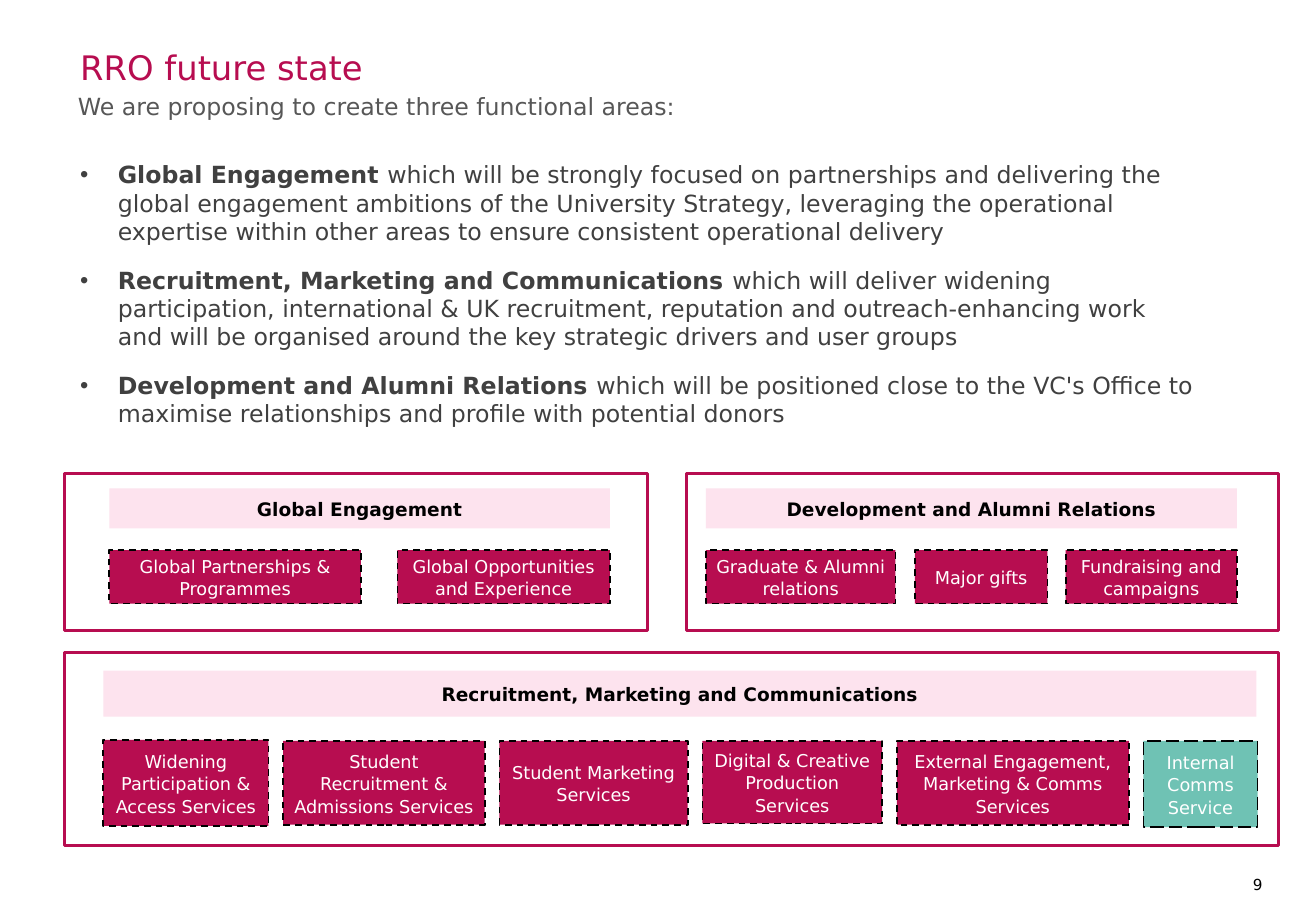
"""Build the slide on the three proposed functional areas."""
from dataclasses import dataclass

from lxml.etree import SubElement
from pptx import Presentation
from pptx.dml.color import RGBColor
from pptx.enum.dml import MSO_LINE_DASH_STYLE as Dash
from pptx.enum.shapes import MSO_SHAPE as Shape
from pptx.enum.text import MSO_ANCHOR as Anchor, MSO_AUTO_SIZE as AutoSize, PP_ALIGN as Align
from pptx.oxml.ns import qn
from pptx.util import Inches, Pt

FONT = "DejaVu Sans"
CRIMSON, PINK, TEAL = "B70D50", "FDE3EE", "6FC2B4"
BLACK, WHITE, GREY, DARK = "000000", "FFFFFF", "575757", "404040"
INDENT = 0.31


@dataclass
class Rect:
    left: float
    top: float
    width: float
    height: float

    def lengths(self) -> list:
        return [Inches(v) for v in (self.left, self.top, self.width, self.height)]


@dataclass
class Team:
    text: str
    rect: Rect
    fill: str = CRIMSON
    dash: Dash = Dash.DASH


@dataclass
class Area:
    name: str
    frame: Rect
    header: Rect
    teams: list[Team]


POINTS = [
    ("Global Engagement ",
     "which will be strongly focused on partnerships and delivering the global engagement "
     "ambitions of the University Strategy, leveraging the operational expertise within "
     "other areas to ensure consistent operational delivery"),
    ("Recruitment, Marketing and Communications ",
     "which will deliver widening participation, international & UK recruitment, reputation "
     "and outreach-enhancing work and will be organised around the key strategic drivers "
     "and user groups"),
    ("Development and Alumni Relations ",
     "which will be positioned close to the VC's Office to maximise relationships and "
     "profile with potential donors"),
]

AREAS = [
    Area("Global Engagement", Rect(0.53, 3.9, 4.8, 1.29), Rect(0.9, 4.02, 4.12, 0.33), [
        Team("Global Partnerships & Programmes", Rect(0.9, 4.53, 2.07, 0.44)),
        Team("Global Opportunities and Experience", Rect(3.27, 4.53, 1.75, 0.44)),
    ]),
    Area("Development and Alumni Relations",
         Rect(5.65, 3.9, 4.87, 1.29), Rect(5.81, 4.02, 4.37, 0.33), [
             Team("Graduate & Alumni relations", Rect(5.81, 4.53, 1.56, 0.44)),
             Team("Major gifts", Rect(7.53, 4.53, 1.09, 0.44)),
             Team("Fundraising and campaigns", Rect(8.77, 4.53, 1.41, 0.44)),
         ]),
    Area("Recruitment, Marketing and Communications",
         Rect(0.53, 5.37, 9.99, 1.59), Rect(0.85, 5.52, 9.49, 0.38), [
             Team("Widening Participation & Access Services", Rect(0.85, 6.09, 1.36, 0.71)),
             Team("Student Recruitment & Admissions Services", Rect(2.33, 6.1, 1.66, 0.69)),
             Team("Student Marketing Services", Rect(4.11, 6.1, 1.55, 0.69)),
             Team("Digital & Creative Production Services", Rect(5.78, 6.1, 1.48, 0.68)),
             Team("External Engagement, Marketing & Comms\nServices",
                  Rect(7.38, 6.1, 1.91, 0.69)),
             Team("Internal Comms\nService", Rect(9.41, 6.1, 0.94, 0.71), TEAL, Dash.LONG_DASH),
         ]),
]


def rgb(value: str) -> RGBColor:
    return RGBColor.from_string(value)


def add_run(p, text: str, *, size: float, color: str, bold: bool = False) -> None:
    r = p.add_run()
    r.text = text
    r.font.name, r.font.size, r.font.bold = FONT, Pt(size), bold
    r.font.color.rgb = rgb(color)


def set_bullet(p, char: str = "") -> None:
    pPr = p._p.get_or_add_pPr()
    indent = Inches(INDENT) if char else 0
    pPr.set("marL", str(indent))
    pPr.set("indent", str(-indent))
    if char:
        SubElement(pPr, qn("a:buChar"), char=char)
    else:
        SubElement(pPr, qn("a:buNone"))


def set_frame(sp, *, inset: float = 0, anchor: Anchor = Anchor.TOP):
    tf = sp.text_frame
    tf.word_wrap, tf.auto_size, tf.vertical_anchor = True, AutoSize.NONE, anchor
    tf.margin_left = tf.margin_right = tf.margin_top = tf.margin_bottom = Inches(inset)
    return tf


def place(sp, rect: Rect) -> None:
    sp.left, sp.top, sp.width, sp.height = rect.lengths()


def add_rect(s, rect: Rect, *, fill: str = "", line: str = "", weight: float = 1,
             dash: Dash = Dash.SOLID):
    sp = s.shapes.add_shape(Shape.RECTANGLE, *rect.lengths())
    sp.shadow.inherit = False
    if fill:
        sp.fill.solid()
        sp.fill.fore_color.rgb = rgb(fill)
    else:
        sp.fill.background()
    if line:
        sp.line.color.rgb = rgb(line)
        sp.line.width, sp.line.dash_style = Pt(weight), dash
    else:
        sp.line.fill.background()
    return sp


def add_label(sp, text: str, *, inset: float, size: float, color: str,
              bold: bool = False) -> None:
    tf = set_frame(sp, inset=inset, anchor=Anchor.MIDDLE)
    for i, line in enumerate(text.split("\n")):
        p = tf.add_paragraph() if i else tf.paragraphs[0]
        p.alignment, p.line_spacing = Align.CENTER, 1.06
        add_run(p, line, size=size, color=color, bold=bold)


def add_area(s, area: Area) -> None:
    add_rect(s, area.frame, line=CRIMSON, weight=1.5)
    header = add_rect(s, area.header, fill=PINK)
    add_label(header, area.name, inset=0.1, size=11, color=BLACK, bold=True)
    for team in area.teams:
        sp = add_rect(s, team.rect, fill=team.fill, line=BLACK, dash=team.dash)
        add_label(sp, team.text, inset=0.08, size=10.5, color=WHITE)


def add_texts(s) -> None:
    title, intro, points = s.placeholders
    place(title, Rect(0.66, 0.37, 9.95, 0.37))
    p = set_frame(title, anchor=Anchor.MIDDLE).paragraphs[0]
    p.alignment = Align.LEFT
    add_run(p, "RRO future state", size=20, color=CRIMSON)

    place(intro, Rect(0.64, 0.76, 9.76, 0.5))
    p = set_frame(intro).paragraphs[0]
    set_bullet(p)
    p.space_before = Pt(0)
    add_run(p, "We are proposing to create three functional areas:", size=14, color=GREY)

    place(points, Rect(0.66, 1.32, 9.19, 2.5))
    tf = set_frame(points)
    for i, (name, detail) in enumerate(POINTS):
        p = tf.add_paragraph() if i else tf.paragraphs[0]
        set_bullet(p, "•")
        p.space_before = Pt(12 if i else 0)
        add_run(p, name, size=14, color=DARK, bold=True)
        add_run(p, detail, size=14, color=DARK)

    number = s.shapes.add_textbox(*Rect(10.12, 7.21, 0.27, 0.15).lengths())
    p = set_frame(number).paragraphs[0]
    p.alignment = Align.RIGHT
    add_run(p, "9", size=9, color=BLACK)


def main() -> None:
    prs = Presentation()
    prs.slide_width, prs.slide_height = Inches(10.83), Inches(7.5)
    s = prs.slides.add_slide(prs.slide_layouts.get_by_name("Two Content"))
    add_texts(s)
    for area in AREAS:
        add_area(s, area)
    prs.save("out.pptx")


if __name__ == "__main__":
    main()
